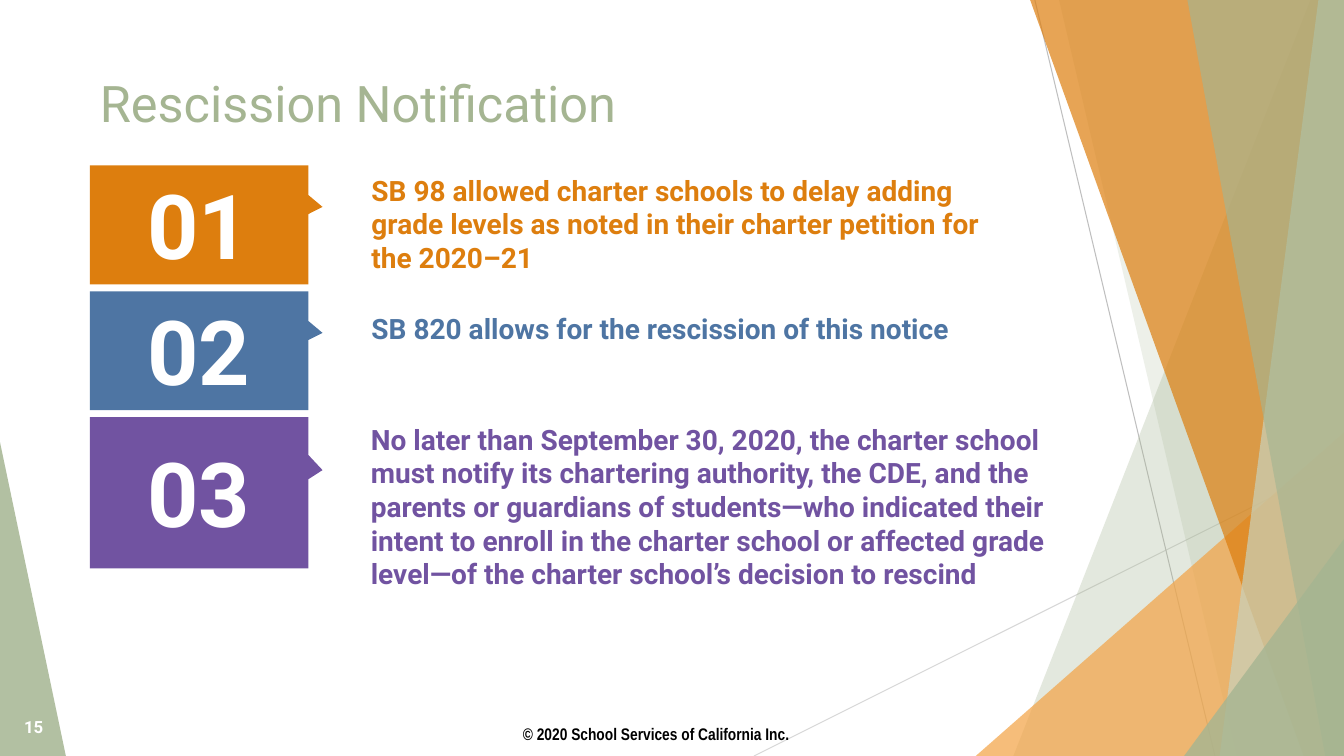
"""Build the Rescission Notification slide."""
from dataclasses import dataclass

import pptx
import pptx.dml.color
import pptx.enum.shapes
import pptx.enum.text
import pptx.oxml
import pptx.oxml.ns
import pptx.util

ALIGN = pptx.enum.text.PP_ALIGN
ANCHOR = pptx.enum.text.MSO_ANCHOR


@dataclass(frozen=True)
class Theme:
    """Colours, fonts and type sizes of the slide."""
    sage: str = "A5B592"
    pale_sage: str = "C8D2BC"
    apricot: str = "F3A447"
    orange: str = "DD7E0E"
    blue: str = "4E75A3"
    purple: str = "7153A1"
    light_grey: str = "D8D8D8"
    grey: str = "BFBFBF"
    white: str = "FFFFFF"
    black: str = "000000"
    font: str = "Roboto"
    footer_font: str = "Arial Narrow"
    title: int = 36
    number: int = 64
    body: int = 20
    small: int = 12


def write(box, text, *, font, size, color, bold=True, align=ALIGN.LEFT, anchor=ANCHOR.TOP):
    """Put one formatted paragraph into a box."""
    frame = box.text_frame
    frame.word_wrap = True
    frame.auto_size = pptx.enum.text.MSO_AUTO_SIZE.NONE
    frame.vertical_anchor = anchor
    para = frame.paragraphs[0]
    para.alignment = align
    span = para.add_run()
    span.text = text
    span.font.name = font
    span.font.size = pptx.util.Pt(size)
    span.font.bold = bold
    span.font.color.rgb = pptx.dml.color.RGBColor.from_string(color)


class Page:
    """A slide whose lengths are percentages of its width and height."""

    def __init__(self, deck, theme):
        """Add a title-only slide to the deck."""
        self.deck = deck
        self.theme = theme
        self.slide = deck.slides.add_slide(deck.slide_layouts[5])

    def place(self, *shares):
        """Turn alternating x and y percentages into lengths."""
        sides = (self.deck.slide_width, self.deck.slide_height)
        return [round(share * sides[i % 2] / 100) for i, share in enumerate(shares)]

    def title(self, text, area):
        """Move and fill the title placeholder."""
        box = self.slide.shapes.title
        box.left, box.top, box.width, box.height = self.place(*area)
        write(box, text, font=self.theme.font, size=self.theme.title,
              color=self.theme.sage, bold=False)

    def text(self, text, area, **style):
        """Add a text box."""
        box = self.slide.shapes.add_textbox(*self.place(*area))
        write(box, text, **{"font": self.theme.font, **style})

    def polygon(self, points, color, opacity=100):
        """Add a filled outline without a border."""
        start, *others = [self.place(*point) for point in points]
        builder = self.slide.shapes.build_freeform(*start)
        builder.add_line_segments(others, close=True)
        shape = builder.convert_to_shape()
        shape.shadow.inherit = False
        shape.fill.solid()
        shape.fill.fore_color.rgb = pptx.dml.color.RGBColor.from_string(color)
        shape.line.fill.background()
        if opacity < 100:
            tint = shape.element.spPr.find(".//" + pptx.oxml.ns.qn("a:srgbClr"))
            alpha = pptx.oxml.parse_xml(
                f'<a:alpha {pptx.oxml.ns.nsdecls("a")} val="{opacity * 1000}"/>')
            tint.append(alpha)

    def line(self, start, end, color):
        """Add a thin straight line."""
        straight = pptx.enum.shapes.MSO_CONNECTOR.STRAIGHT
        line = self.slide.shapes.add_connector(straight, *self.place(*start, *end))
        line.line.color.rgb = pptx.dml.color.RGBColor.from_string(color)
        line.line.width = pptx.util.Pt(0.75)
        line.element.spPr.append(
            pptx.oxml.parse_xml(f'<a:effectLst {pptx.oxml.ns.nsdecls("a")}/>'))

    def band(self, top_x, bottom_x, color, opacity):
        """Add a full-height facet reaching the right edge."""
        self.polygon([(top_x, 0), (bottom_x, 100), (100, 100), (100, 0)], color, opacity)

    def corner(self, left, top, color, opacity):
        """Add a triangle in the lower right corner."""
        self.polygon([(left, 100), (100, top), (100, 100)], color, opacity)

    def badge(self, number, top, height, color):
        """Add a numbered block with a pointer on its right side."""
        left, right, tip, number_height = 6.68, 22.95, 24, 15.73
        upper, middle, lower = (top + height * share for share in (0.25, 0.35, 0.41))
        bottom = top + height
        self.polygon([(tip, middle), (right, upper), (right, top), (left, top),
                      (left, bottom), (right, bottom), (right, lower)], color)
        self.text(number, (8.85, top + (height - number_height) / 2, 11.85, number_height),
                  size=self.theme.number, color=self.theme.white, align=ALIGN.CENTER)


def draw_backdrop(page):
    """Draw the facets and thin lines at the edges."""
    theme = page.theme
    page.polygon([(0, 58.5), (4.9, 100), (0, 100)], theme.sage, 85)
    page.line((56.1, 100), (100, 61), theme.light_grey)
    page.line((77, 0), (90.4, 100), theme.grey)
    page.band(97.5, 75.4, theme.sage, 30)
    page.band(78.8, 92, theme.sage, 20)
    page.corner(72.6, 57.2, theme.apricot, 72)
    page.band(76.65, 97, theme.orange, 70)
    page.band(98.1, 90.75, theme.pale_sage, 70)
    page.band(88.35, 98.6, theme.sage, 65)
    page.corner(88.1, 71.3, theme.sage, 80)


def main():
    """Build and save the deck."""
    deck = pptx.Presentation()
    deck.slide_width = pptx.util.Inches(13.33)
    deck.slide_height = pptx.util.Inches(7.5)
    theme = Theme()
    page = Page(deck, theme)
    draw_backdrop(page)
    page.text("© 2020 School Services of California Inc.", (31.95, 95.47, 33.75, 3.2),
              font=theme.footer_font, size=theme.small, color=theme.black,
              align=ALIGN.CENTER, anchor=ANCHOR.MIDDLE)
    page.title("Rescission Notification", (6.68, 8.93, 69.45, 10.93))
    page.text("15", (1.05, 93.47, 5.63, 5.33), size=theme.small, color=theme.white,
              anchor=ANCHOR.MIDDLE)

    steps = [
        (15.73, theme.orange, (26.9, 22.27, 48.15, 14.8),
         "SB 98 allowed charter schools to delay adding grade levels as noted in their "
         "charter petition for the 2020–21"),
        (15.73, theme.blue, (26.9, 40.53, 46.58, 5.87),
         "SB 820 allows for the rescission of this notice"),
        (20, theme.purple, (26.85, 55.2, 54.75, 28.27),
         "No later than September 30, 2020, the charter school must notify its chartering "
         "authority, the CDE, and the parents or guardians of students—who indicated their "
         "intent to enroll in the charter school or affected grade level—of the charter "
         "school’s decision to rescind"),
    ]
    top, gap = 21.87, 0.93
    for index, (height, color, area, statement) in enumerate(steps, start=1):
        page.badge(f"{index:02}", top, height, color)
        page.text(statement, area, size=theme.body, color=color)
        top += height + gap
    deck.save("out.pptx")


if __name__ == "__main__":
    main()
